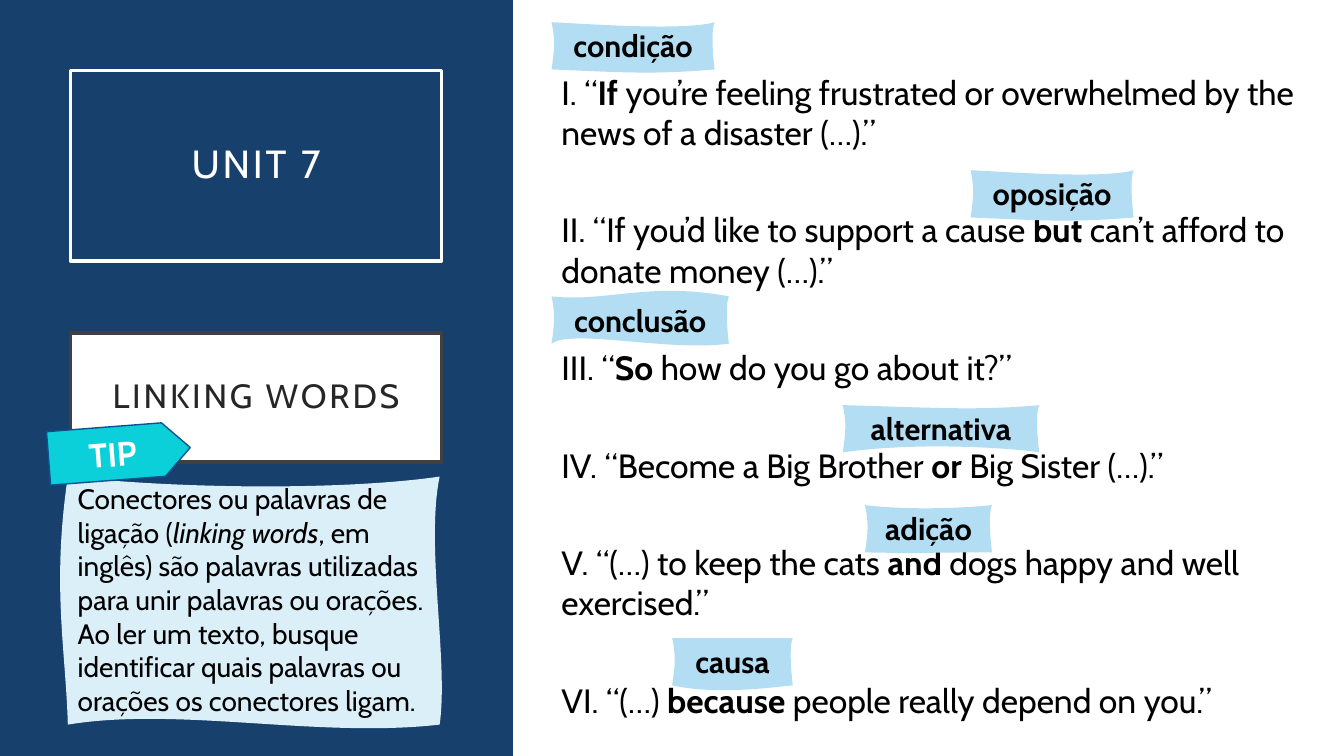
from dataclasses import dataclass

from lxml.etree import SubElement
from pptx import Presentation
from pptx.dml.color import RGBColor
from pptx.enum.shapes import MSO_SHAPE
from pptx.enum.text import MSO_ANCHOR, MSO_AUTO_SIZE, PP_ALIGN
from pptx.oxml.ns import qn
from pptx.util import Cm, Pt

COLORS = {
    "navy": "17406D", "white": "FFFFFF", "black": "000000",
    "frame": "404040", "heading": "262626", "label": "B3DDF2",
    "note": "DBEFF9", "tip": "0BD0D9", "tip_line": "0B5292",
}
FONT = "Cabin"

Point = tuple[float, float]
Bend = tuple[Point, Point]


@dataclass(frozen=True)
class Span:
    text: str
    bold: bool = False
    italic: bool = False


@dataclass(frozen=True)
class Ribbon:
    """A wavy box in cm; bends are control points from its top left corner, clockwise."""
    left: float
    top: float
    width: float
    height: float
    upper: Bend
    right: Bend
    lower: Bend
    back: Bend


@dataclass(frozen=True)
class Label:
    text: str
    left: float
    top: float
    width: float
    upper: Bend
    lower: Bend

    def ribbon(self) -> Ribbon:
        right = ((self.width - 0.08, 0.15), (self.width - 0.06, 0.71))
        return Ribbon(self.left, self.top, self.width, 1.19, self.upper, right,
                      self.lower, ((0.07, 0.71), (0.1, 0.46)))


LABELS = [
    Label("condição", 13.9, 0.56, 4.11, ((0.69, 0.03), (3.35, 0.23)), ((2.62, 1.32), (1.83, 1.27))),
    Label("oposição", 24.46, 4.29, 4.11, ((0.69, 0.03), (3.35, 0.23)), ((2.62, 1.32), (1.83, 1.27))),
    Label("conclusão", 13.9, 7.47, 4.47, ((1.42, 0.15), (2.44, -0.38)), ((2.95, 1.4), (0.53, 0.81))),
    Label("alternativa", 21.24, 10.21, 4.95, ((2.03, 0.05), (3.35, 0.15)), ((4.32, 1.09), (1.96, 0.91))),
    Label("adição", 21.8, 12.73, 3.2, ((1.3, 0.15), (2.72, 0.05)), ((1.68, 1.19), (1.4, 1.22))),
    Label("causa", 16.94, 16.08, 3.04, ((1.32, 0), (2.21, 0)), ((2.69, 1.22), (1.14, 1.45))),
]
NOTE = Ribbon(1.71, 12.01, 9.37, 6.25, ((3.07, 0.33), (7.11, 0.33)), ((9.01, 1.75), (9.6, 4.67)),
              ((6.3, 6.6), (2.79, 5.79)), ((-0.05, 4.37), (-0.41, 2.77)))
NOTE_TEXT = [
    [Span("Conectores ou palavras de ligação ("), Span("linking words", italic=True),
     Span(", em inglês) são palavras utilizadas para unir palavras ou orações. "
          "Ao ler um texto, busque")],
    [Span("identificar quais palavras ou orações os conectores ligam.")],
]
# Text before the linking word, the linking word, text after it
SENTENCES = [
    ("I. “", "If", " you’re feeling frustrated or overwhelmed by the news of a disaster (…).”"),
    ("II. “If you’d like to support a cause ", "but", " can’t afford to donate money (…).”"),
    ("III. “", "So", " how do you go about it?”"),
    ("IV. “Become a Big Brother ", "or", " Big Sister (…).”"),
    ("V. “(…) to keep the cats ", "and", " dogs happy and well exercised.”"),
    ("VI. “(…) ", "because", " people really depend on you.”"),
]


def color(name: str) -> RGBColor:
    return RGBColor.from_string(COLORS[name])


def paint(shape, fill: str | None, line: str | None = None, weight: float = 0) -> None:
    if fill:
        shape.fill.solid()
        shape.fill.fore_color.rgb = color(fill)
    else:
        shape.fill.background()
    if line:
        shape.line.color.rgb = color(line)
        shape.line.width = Pt(weight)
    else:
        shape.line.fill.background()


def write(shape, paragraphs: list[list[Span]], size: float, ink: str = "black",
          align=PP_ALIGN.LEFT, anchor=MSO_ANCHOR.TOP, fit=MSO_AUTO_SIZE.NONE,
          line_spacing: float = 1.0, gap: float = 0, tracking: float = 0) -> None:
    frame = shape.text_frame
    frame.word_wrap = True
    frame.auto_size = fit
    frame.vertical_anchor = anchor
    for index, spans in enumerate(paragraphs):
        paragraph = frame.add_paragraph() if index else frame.paragraphs[0]
        paragraph.alignment = align
        paragraph.line_spacing = line_spacing
        paragraph.space_before = Pt(0)
        paragraph.space_after = Pt(gap)
        for span in spans:
            run = paragraph.add_run()
            run.text = span.text
            font = run.font
            font.name, font.size = FONT, Pt(size)
            font.bold, font.italic = span.bold, span.italic
            font.color.rgb = color(ink)
            if tracking:
                run._r.get_or_add_rPr().set("spc", str(int(tracking * 100)))


def add_ribbon(page, ribbon: Ribbon, fill: str):
    """Draw the straight box as a freeform, then bend each of its four sides."""
    left, top = Cm(ribbon.left), Cm(ribbon.top)
    right, bottom = left + Cm(ribbon.width), top + Cm(ribbon.height)
    builder = page.shapes.build_freeform(left, top)
    builder.add_line_segments([(right, top), (right, bottom), (left, bottom), (left, top)])
    shape = builder.convert_to_shape()
    shape.shadow.inherit = False
    paint(shape, fill)
    sides = list(shape.element.iter(qn("a:lnTo")))
    bends = (ribbon.upper, ribbon.right, ribbon.lower, ribbon.back)
    for side, bend in zip(sides, bends):
        side_curve = SubElement(side.getparent(), qn("a:cubicBezTo"))
        for x, y in bend:
            SubElement(side_curve, qn("a:pt"), x=str(int(Cm(x))), y=str(int(Cm(y))))
        side_curve.append(side[0])
        side.getparent().replace(side, side_curve)
    return shape


def add_block(page, kind, left: float, top: float, width: float, height: float):
    shape = page.shapes.add_shape(kind, Cm(left), Cm(top), Cm(width), Cm(height))
    shape.shadow.inherit = False
    return shape


def write_heading(shape, text: str, size: float, ink: str) -> None:
    frame = shape.text_frame
    frame.margin_left = frame.margin_right = frame.margin_top = frame.margin_bottom = Cm(0.51)
    write(shape, [[Span(text)]], size, ink, PP_ALIGN.CENTER, MSO_ANCHOR.MIDDLE,
          line_spacing=0.9, tracking=2)


def main() -> None:
    deck = Presentation()
    deck.slide_width, deck.slide_height = Cm(33.87), Cm(19.05)
    page = deck.slides.add_slide(deck.slide_layouts[5])
    grow = MSO_AUTO_SIZE.SHAPE_TO_FIT_TEXT

    sidebar = add_block(page, MSO_SHAPE.RECTANGLE, 0, 0, 12.93, 19.05)
    paint(sidebar, "navy")

    title = page.shapes.title
    sidebar.element.addnext(title.element)
    title.left, title.top, title.width, title.height = Cm(1.78), Cm(1.78), Cm(9.35), Cm(4.8)
    paint(title, None, "white", 2.5)
    write_heading(title, "UNIT 7", 28, "white")

    topic = add_block(page, MSO_SHAPE.RECTANGLE, 1.78, 8.39, 9.35, 3.25)
    paint(topic, "white", "frame", 2.5)
    write_heading(topic, "LINKING WORDS", 24, "heading")

    examples = page.shapes.add_textbox(Cm(13.9), Cm(1.68), Cm(19), Cm(16.76))
    write(examples, [[Span(before), Span(word, bold=True), Span(after)]
                     for before, word, after in SENTENCES], 24, fit=grow, gap=40.8)

    for label in LABELS:
        tag = add_ribbon(page, label.ribbon(), "label")
        write(tag, [[Span(label.text, bold=True)]], 22, align=PP_ALIGN.CENTER, fit=grow)

    note = add_ribbon(page, NOTE, "note")
    write(note, NOTE_TEXT, 20, fit=grow)

    tip = add_block(page, MSO_SHAPE.PENTAGON, 1.22, 10.74, 3.58, 1.35)
    tip.rotation = 355.6
    paint(tip, "tip", "tip_line", 1)
    write(tip, [[Span("TIP", bold=True)]], 24, "white", PP_ALIGN.CENTER, MSO_ANCHOR.MIDDLE)

    deck.save("out.pptx")


if __name__ == "__main__":
    main()
